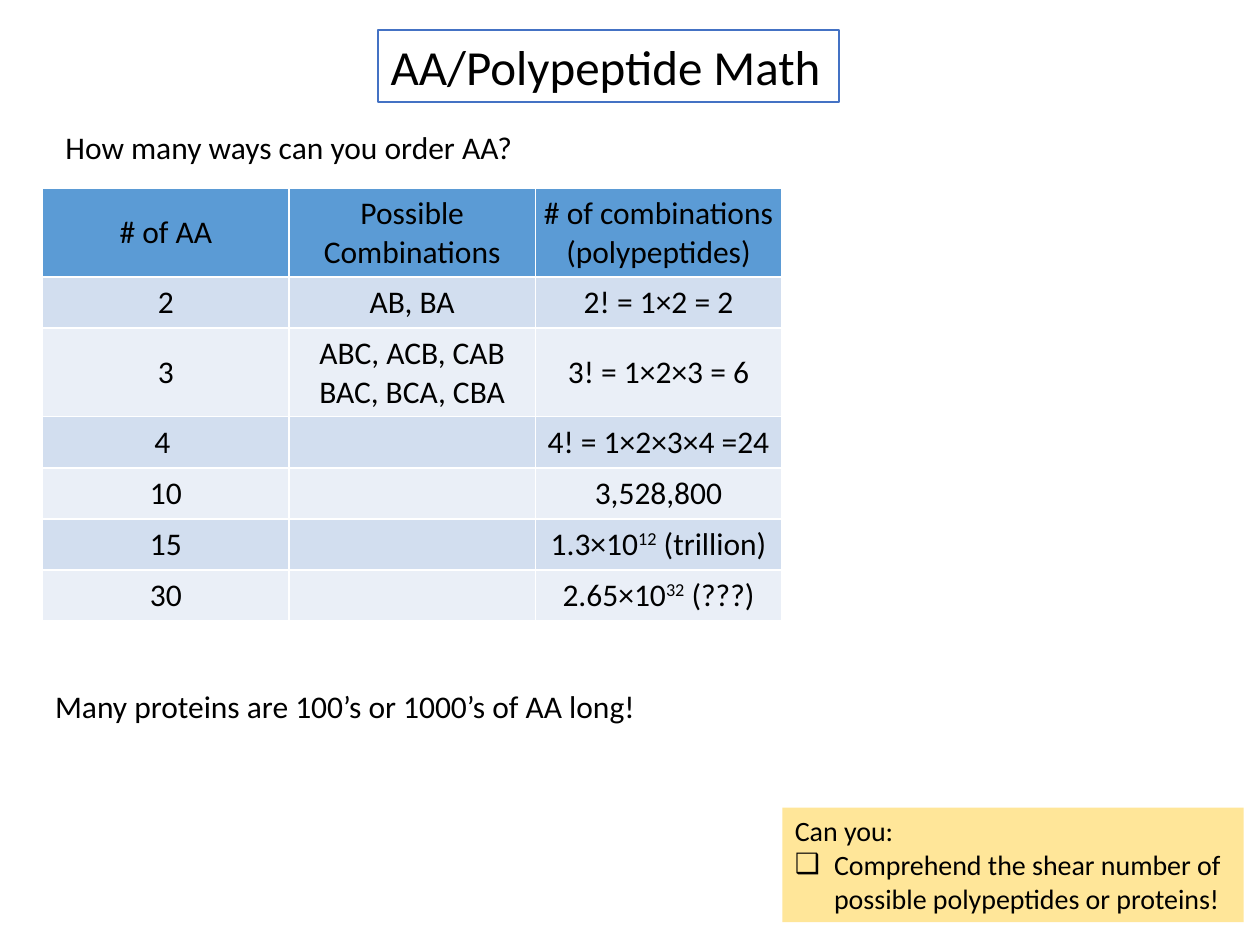
import pptx
import pptx.dml.color
import pptx.enum.text
import pptx.oxml
import pptx.oxml.ns
import pptx.util
from pptx.util import Cm

COLORS = {
    "text": "000000",
    "white": "FFFFFF",
    "title_line": "4472C4",
    "header": "5B9BD5",
    "band_dark": "D2DEEF",
    "band_light": "EAEFF7",
    "reminder": "FFE699",
}
FONT = "Calibri"

# Each cell is a list of paragraphs; a paragraph is a list of runs.
# A run given as a tuple is a superscript.
ROWS = [
    [[["# of AA"]], [["Possible Combinations"]], [["# of combinations"], ["(polypeptides)"]]],
    [[["2"]], [["AB, BA"]], [["2! = 1×2 = 2"]]],
    [[["3"]], [["ABC, ACB, CAB"], ["BAC, BCA, CBA"]], [["3! = 1×2×3 = 6"]]],
    [[["4 "]], [], [["4! = 1×2×3×4 =24"]]],
    [[["10"]], [], [["3,528,800"]]],
    [[["15"]], [], [["1.3×10", ("12",), " (trillion)"]]],
    [[["30"]], [], [["2.65×10", ("32",), " (???)"]]],
]
TWO_LINE_ROWS = (0, 2)


def rgb(name):
    return pptx.dml.color.RGBColor.from_string(COLORS[name])


def add_run(paragraph, text, size, superscript=False):
    run = paragraph.add_run()
    run.text = text
    run.font.name = FONT
    run.font.size = pptx.util.Pt(size)
    run.font.bold = False
    run.font.color.rgb = rgb("text")
    if superscript:
        run.font._element.set("baseline", "30000")


def format_placeholder(shape, left, top, width, height, fill):
    """Move and fill a placeholder, keeping its size fixed."""
    shape.left, shape.top = Cm(left), Cm(top)
    shape.width, shape.height = Cm(width), Cm(height)
    shape.fill.solid()
    shape.fill.fore_color.rgb = rgb(fill)
    shape.text_frame.auto_size = pptx.enum.text.MSO_AUTO_SIZE.NONE
    shape.text_frame.vertical_anchor = pptx.enum.text.MSO_ANCHOR.TOP


def set_title(slide):
    title = slide.shapes.title
    format_placeholder(title, 7.62, 0.61, 9.3, 1.45, "white")
    title.line.color.rgb = rgb("title_line")
    title.line.width = pptx.util.Pt(1)
    paragraph = title.text_frame.paragraphs[0]
    paragraph.alignment = pptx.enum.text.PP_ALIGN.LEFT
    add_run(paragraph, "AA/Polypeptide Math", 28)


def add_statement(slide, text, left, top, width):
    box = slide.shapes.add_textbox(Cm(left), Cm(top), Cm(width), Cm(1.03))
    box.text_frame.word_wrap = False
    box.text_frame.auto_size = pptx.enum.text.MSO_AUTO_SIZE.SHAPE_TO_FIT_TEXT
    add_run(box.text_frame.paragraphs[0], text, 18)


def set_borders(cell):
    properties = cell._tc.get_or_add_tcPr()
    for side in "LRTB":
        properties.append(pptx.oxml.parse_xml(
            f'<a:ln{side} {pptx.oxml.ns.nsdecls("a")} w="{pptx.util.Pt(1)}">'
            f'<a:solidFill><a:srgbClr val="{COLORS["white"]}"/></a:solidFill>'
            f'</a:ln{side}>'))


def fill_cell(cell, paragraphs, color):
    set_borders(cell)
    cell.fill.solid()
    cell.fill.fore_color.rgb = rgb(color)
    cell.vertical_anchor = pptx.enum.text.MSO_ANCHOR.MIDDLE
    cell.margin_left = cell.margin_right = Cm(0.13)
    cell.margin_top = cell.margin_bottom = Cm(0.13)
    text_frame = cell.text_frame
    for index, runs in enumerate(paragraphs):
        paragraph = text_frame.add_paragraph() if index else text_frame.paragraphs[0]
        paragraph.alignment = pptx.enum.text.PP_ALIGN.CENTER
        for run in runs:
            superscript = isinstance(run, tuple)
            add_run(paragraph, run[0] if superscript else run, 18, superscript)


def add_combination_table(slide):
    frame = slide.shapes.add_table(
        len(ROWS), len(ROWS[0]), Cm(0.86), Cm(3.8), Cm(14.9), Cm(8.71))
    table = frame.table
    for row_index, row in enumerate(ROWS):
        table.rows[row_index].height = Cm(1.78 if row_index in TWO_LINE_ROWS else 1.03)
        if row_index == 0:
            color = "header"
        else:
            color = "band_dark" if row_index % 2 else "band_light"
        for column_index, paragraphs in enumerate(row):
            fill_cell(table.cell(row_index, column_index), paragraphs, color)


def set_bullet(paragraph, bullet, indent):
    """Give the paragraph a hanging indent and a bullet element such as 'buNone'."""
    properties = paragraph._p.get_or_add_pPr()
    properties.set("marL", str(Cm(indent)))
    properties.set("indent", str(-Cm(indent)))
    properties.append(pptx.oxml.parse_xml(f'<a:{bullet} {pptx.oxml.ns.nsdecls("a")}/>'))


def set_reminder(slide):
    body = slide.placeholders[1]
    format_placeholder(body, 15.77, 16.28, 9.3, 2.31, "reminder")
    heading = body.text_frame.paragraphs[0]
    goal = body.text_frame.add_paragraph()
    for paragraph in (heading, goal):
        paragraph.space_before = pptx.util.Pt(0)
    set_bullet(heading, "buNone", 0)
    add_run(heading, "Can you:", 16)
    set_bullet(goal, 'buChar char="❑"', 0.79)
    add_run(goal, "Comprehend the shear number of possible polypeptides or proteins!", 16)


def main():
    presentation = pptx.Presentation()
    presentation.slide_width, presentation.slide_height = Cm(25.4), Cm(19.05)
    slide = presentation.slides.add_slide(presentation.slide_layouts[1])
    set_title(slide)
    add_statement(slide, "How many ways can you order AA?", 1.07, 2.46, 9.63)
    add_combination_table(slide)
    add_statement(slide, "Many proteins are 100’s or 1000’s of AA long!", 0.86, 13.72, 12.34)
    set_reminder(slide)
    presentation.save("out.pptx")


if __name__ == "__main__":
    main()
